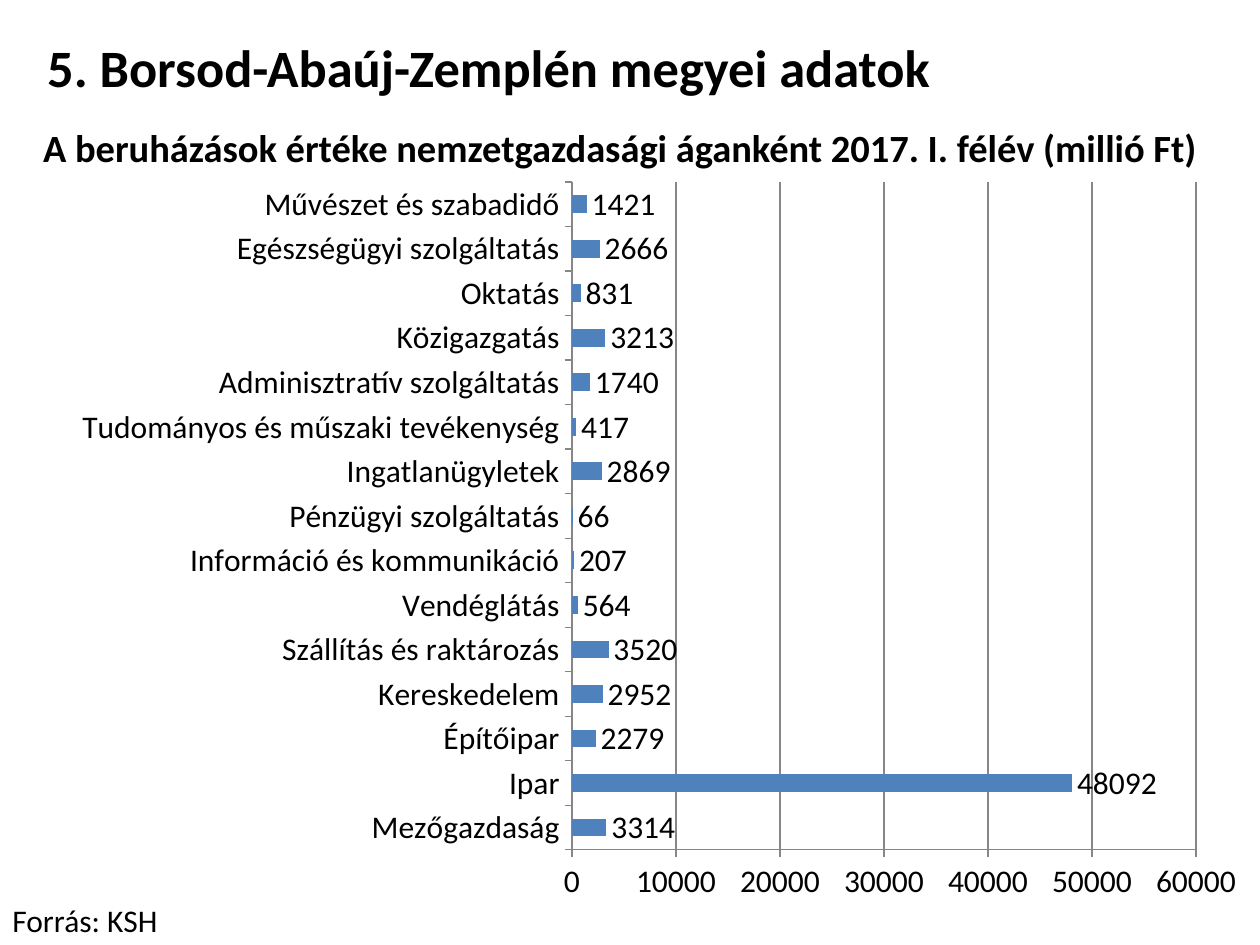
from lxml.etree import SubElement
from pptx import Presentation
from pptx.chart.data import CategoryChartData
from pptx.dml.color import RGBColor
from pptx.enum.chart import XL_CHART_TYPE, XL_LABEL_POSITION, XL_TICK_MARK
from pptx.enum.text import MSO_ANCHOR, PP_ALIGN
from pptx.oxml.ns import qn
from pptx.util import Pt

PX = 914400 / 126
FONT = "Calibri"
BLACK = RGBColor(0x00, 0x00, 0x00)
BLUE = RGBColor(0x4F, 0x81, 0xBD)
GREY = RGBColor(0x86, 0x86, 0x86)

SECTORS = [
    ("Mezőgazdaság", 3314),
    ("Ipar", 48092),
    ("Építőipar", 2279),
    ("Kereskedelem", 2952),
    ("Szállítás és raktározás", 3520),
    ("Vendéglátás", 564),
    ("Információ és kommunikáció", 207),
    ("Pénzügyi szolgáltatás", 66),
    ("Ingatlanügyletek", 2869),
    ("Tudományos és műszaki tevékenység", 417),
    ("Adminisztratív szolgáltatás", 1740),
    ("Közigazgatás", 3213),
    ("Oktatás", 831),
    ("Egészségügyi szolgáltatás", 2666),
    ("Művészet és szabadidő", 1421),
]


def emu(*px):
    return [round(n * PX) for n in px]


class Page:
    """Holds the slide and the style shared by its elements."""

    def __init__(self, slide):
        self.slide = slide

    def style(self, font, size, bold=False):
        font.name = FONT
        font.size = Pt(size)
        font.bold = bold
        font.color.rgb = BLACK

    def line(self, frame, text, size, bold, align):
        para = frame.paragraphs[0]
        para.alignment = align
        run = para.add_run()
        run.text = text
        self.style(run.font, size, bold)

    def title(self, box, text, size):
        shape = self.slide.shapes.title
        shape.left, shape.top, shape.width, shape.height = emu(*box)
        frame = shape.text_frame
        frame.word_wrap = False
        frame.vertical_anchor = MSO_ANCHOR.TOP
        self.line(frame, text, size, True, PP_ALIGN.CENTER)

    def text(self, box, text, size, bold=False, align=PP_ALIGN.LEFT):
        frame = self.slide.shapes.add_textbox(*emu(*box)).text_frame
        frame.word_wrap = True
        self.line(frame, text, size, bold, align)

    def chart(self, box, plot, rows, size):
        data = CategoryChartData(number_format="General")
        data.categories = [name for name, _ in rows]
        data.add_series("Series 1", [value for _, value in rows])
        chart = self.slide.shapes.add_chart(
            XL_CHART_TYPE.BAR_CLUSTERED, *emu(*box), data).chart
        chart.has_legend = False
        chart.has_title = False
        self.style(chart.font, size)
        for axis in (chart.category_axis, chart.value_axis):
            axis.major_tick_mark = XL_TICK_MARK.OUTSIDE
            axis.format.line.color.rgb = GREY
            self.style(axis.tick_labels.font, size)
        scale = chart.value_axis
        scale.minimum_scale, scale.maximum_scale = 0, 60000
        scale.major_unit = 10000
        scale.has_major_gridlines = True
        scale.major_gridlines.format.line.color.rgb = GREY
        self.bars(chart.plots[0], size)
        self.place(chart, box, plot)

    def bars(self, group, size):
        group.gap_width = 150
        group.vary_by_categories = False
        fill = group.series[0].format.fill
        fill.solid()
        fill.fore_color.rgb = BLUE
        group.has_data_labels = True
        labels = group.data_labels
        labels.show_value = True
        labels.position = XL_LABEL_POSITION.OUTSIDE_END
        self.style(labels.font, size)

    def place(self, chart, box, plot):
        """Fix the inner plot area, given in slide px, within the chart box."""
        area = chart.plots[0]._element.getparent()
        for old in area.findall(qn("c:layout")):
            area.remove(old)
        layout = SubElement(area, qn("c:layout"))
        area.insert(0, layout)
        manual = SubElement(layout, qn("c:manualLayout"))
        left, top, wide, high = box
        x, y, w, h = plot
        parts = {
            "layoutTarget": "inner", "xMode": "edge", "yMode": "edge",
            "x": (x - left) / wide, "y": (y - top) / high,
            "w": w / wide, "h": h / high,
        }
        for tag, value in parts.items():
            SubElement(manual, qn("c:" + tag)).set("val", str(value))


def main():
    deck = Presentation()
    deck.slide_width, deck.slide_height = emu(1260, 945)
    page = Page(deck.slides.add_slide(deck.slide_layouts[5]))
    page.title((29, 29, 920, 77), "5. Borsod-Abaúj-Zemplén megyei adatok", 30)
    page.text((29, 118, 1182, 59),
              "A beruházások értéke nemzetgazdasági áganként "
              "2017. I. félév (millió Ft)", 22, True, PP_ALIGN.CENTER)
    page.text((0, 895, 444, 50), "Forrás: KSH", 18)
    page.chart((59, 168, 1201, 748), (572, 182, 624, 668), SECTORS, 18)
    deck.save("out.pptx")


if __name__ == "__main__":
    main()
